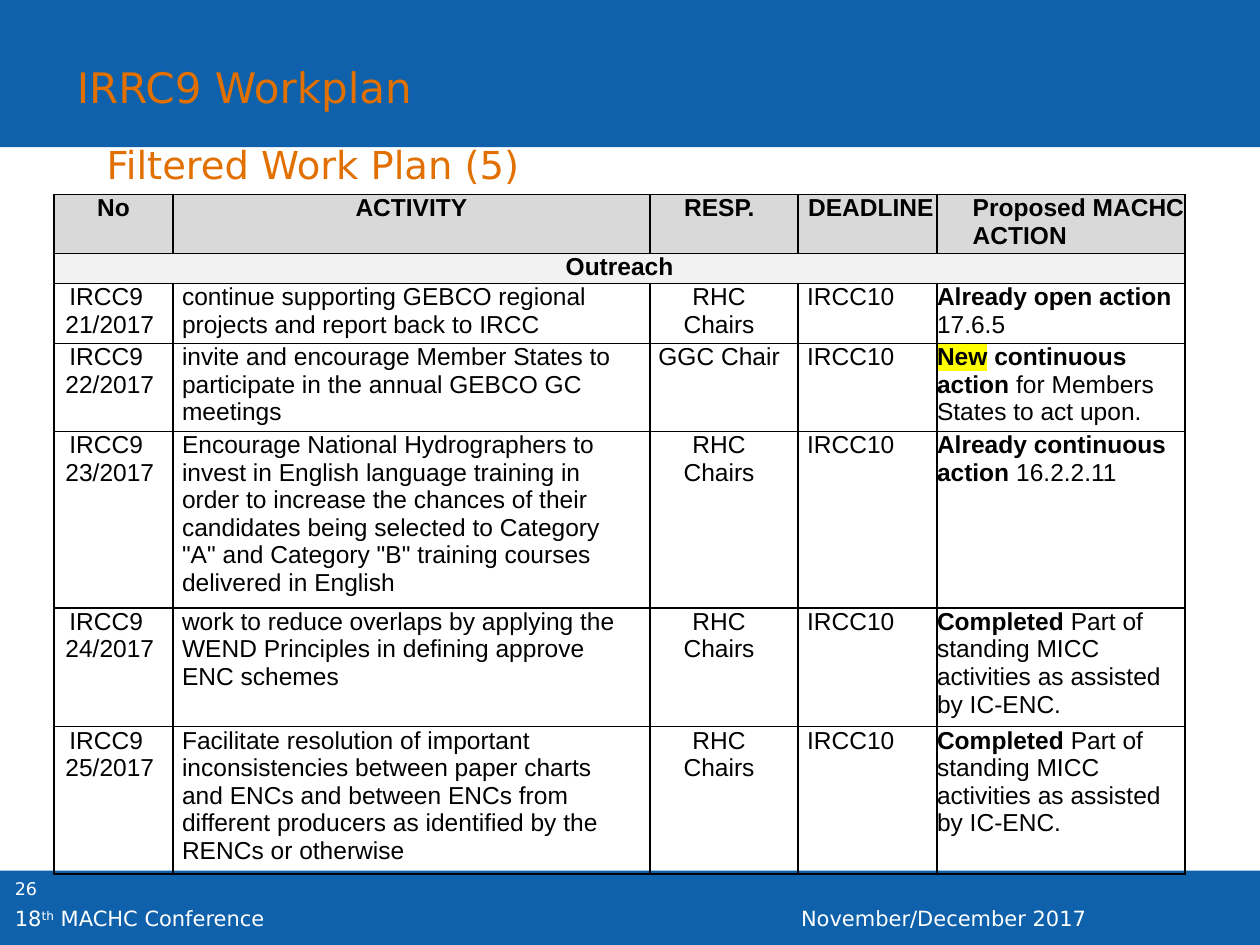
"""Build the IRRC9 work plan slide with its table of outreach activities."""
from dataclasses import dataclass

from lxml.etree import SubElement
from pptx import Presentation
from pptx.dml.color import RGBColor
from pptx.enum.shapes import MSO_SHAPE
from pptx.enum.text import MSO_AUTO_SIZE, PP_ALIGN
from pptx.oxml import parse_xml
from pptx.oxml.ns import nsdecls, qn
from pptx.util import Cm, Pt


@dataclass(frozen=True)
class Theme:
    blue: str = "0E61AA"
    orange: str = "E17000"
    white: str = "FFFFFF"
    black: str = "000000"
    header_fill: str = "D9D9D9"
    section_fill: str = "F2F2F2"
    highlight: str = "FFFF00"
    slide_font: str = "DejaVu Sans"
    table_font: str = "Arial"
    title_size: float = 24
    subtitle_size: float = 22
    footer_size: float = 12
    number_size: float = 10
    table_size: float = 14
    border_width: float = 1


@dataclass(frozen=True)
class Run:
    text: str
    bold: bool = False
    highlighted: bool = False
    superscript: bool = False


@dataclass(frozen=True)
class Band:
    top: float
    height: float


@dataclass(frozen=True)
class Label:
    runs: tuple[Run, ...]
    left: float
    top: float
    width: float
    height: float
    size: float
    color: str
    wrap: bool = True


@dataclass(frozen=True)
class CellStyle:
    left: float = 0
    right: float = 0
    first_line: float = 0
    centered: bool = False
    fill: str | None = None


@dataclass(frozen=True)
class Activity:
    number: str
    task: str
    responsible: str
    action: tuple[Run, ...]


THEME = Theme()
SLIDE_WIDTH, SLIDE_HEIGHT = 25.4, 19.05
BANDS = (Band(17.55, 1.5), Band(0, 2.97))
LABELS = (
    Label((Run("26"),), 0.05, 17.58, 1.98, 1.02, THEME.number_size, THEME.white),
    Label((Run("November/December 2017"),), 15.9, 18.14, 9.5, 0.61, THEME.footer_size, THEME.white),
    Label((Run("18"), Run("th", superscript=True), Run(" MACHC Conference")),
          0.05, 18.14, 11.13, 0.61, THEME.footer_size, THEME.white),
    Label((Run("Filtered Work Plan (5)"),), 1.9, 2.72, 9.17, 1.19,
          THEME.subtitle_size, THEME.orange, wrap=False),
    Label((Run("IRRC9 Workplan"),), 1.3, 1.12, 7.54, 1.27,
          THEME.title_size, THEME.orange, wrap=False),
)
TABLE_LEFT, TABLE_TOP = 1.09, 3.92
COLUMN_WIDTHS = (2.4, 9.61, 2.99, 2.8, 5.0)
ROW_HEIGHTS = (1.19, 0.6, 1.21, 1.77, 3.56, 2.39, 2.96)
HEADINGS = (
    ("No", CellStyle(0.18, 0.18, centered=True, fill=THEME.header_fill)),
    ("ACTIVITY", CellStyle(2.36, 2.36, centered=True, fill=THEME.header_fill)),
    ("RESP.", CellStyle(0.69, fill=THEME.header_fill)),
    ("DEADLINE", CellStyle(0.2, fill=THEME.header_fill)),
    ("Proposed MACHC ACTION", CellStyle(0.72, fill=THEME.header_fill)),
)
SECTION_STYLE = CellStyle(centered=True, fill=THEME.section_fill)
BODY_STYLES = (
    CellStyle(0.23, first_line=0.08),
    CellStyle(0.18, 0.5),
    CellStyle(0.13, 0.33, centered=True),
    CellStyle(0.18),
    CellStyle(),
)
DEADLINE = "IRCC10"
COMPLETED = (Run("Completed ", bold=True),
             Run("Part of standing MICC activities as assisted by IC-ENC."))
ACTIVITIES = (
    Activity("21/2017", "continue supporting GEBCO regional projects and report back to IRCC",
             "RHC Chairs", (Run("Already open action", bold=True), Run(" 17.6.5"))),
    Activity("22/2017", "invite and encourage Member States to participate in the annual "
             "GEBCO GC meetings", "GGC Chair",
             (Run("New", bold=True, highlighted=True), Run(" "),
              Run("continuous action", bold=True), Run(" for Members States to act upon."))),
    Activity("23/2017", "Encourage National Hydrographers to invest in English language training "
             "in order to increase the chances of their candidates being selected to Category "
             "\"A\" and Category \"B\" training courses delivered in English",
             "RHC Chairs", (Run("Already continuous action", bold=True), Run(" 16.2.2.11"))),
    Activity("24/2017", "work to reduce overlaps by applying the WEND Principles in defining "
             "approve ENC schemes", "RHC Chairs", COMPLETED),
    Activity("25/2017", "Facilitate resolution of important inconsistencies between paper charts "
             "and ENCs and between ENCs from different producers as identified by the RENCs "
             "or otherwise", "RHC Chairs", COMPLETED),
)


def write_runs(paragraph, runs: tuple[Run, ...], font_name: str, size: float, color: str) -> None:
    for item in runs:
        run = paragraph.add_run()
        run.text = item.text
        run.font.name = font_name
        run.font.size = Pt(size)
        run.font.bold = item.bold
        run.font.color.rgb = RGBColor.from_string(color)
        properties = run.font._element
        if item.superscript:
            properties.set("baseline", "30000")
        if item.highlighted:
            properties.find(qn("a:latin")).addprevious(parse_xml(
                f'<a:highlight {nsdecls("a")}><a:srgbClr val="{THEME.highlight}"/></a:highlight>'))


def add_band(slide, band: Band) -> None:
    shape = slide.shapes.add_shape(
        MSO_SHAPE.RECTANGLE, 0, Cm(band.top), Cm(SLIDE_WIDTH), Cm(band.height))
    shape.shadow.inherit = False
    shape.fill.solid()
    shape.fill.fore_color.rgb = RGBColor.from_string(THEME.blue)
    shape.line.fill.background()


def add_label(slide, label: Label) -> None:
    shape = slide.shapes.add_textbox(
        Cm(label.left), Cm(label.top), Cm(label.width), Cm(label.height))
    text_frame = shape.text_frame
    text_frame.word_wrap = label.wrap
    if not label.wrap:
        text_frame.auto_size = MSO_AUTO_SIZE.SHAPE_TO_FIT_TEXT
    write_runs(text_frame.paragraphs[0], label.runs, THEME.slide_font, label.size, label.color)


def add_borders(cell) -> None:
    properties = cell._tc.get_or_add_tcPr()
    for side in ("lnL", "lnR", "lnT", "lnB"):
        line = SubElement(properties, qn(f"a:{side}"), w=str(Pt(THEME.border_width)))
        fill = SubElement(line, qn("a:solidFill"))
        SubElement(fill, qn("a:srgbClr"), val=THEME.black)


def fill_cell(cell, runs: tuple[Run, ...], style: CellStyle) -> None:
    cell.margin_left = cell.margin_right = cell.margin_top = cell.margin_bottom = 0
    if style.fill:
        cell.fill.solid()
        cell.fill.fore_color.rgb = RGBColor.from_string(style.fill)
    paragraph = cell.text_frame.paragraphs[0]
    paragraph.alignment = PP_ALIGN.CENTER if style.centered else PP_ALIGN.LEFT
    properties = paragraph._p.get_or_add_pPr()
    for name, length in (("marL", style.left), ("marR", style.right), ("indent", style.first_line)):
        properties.set(name, str(Cm(length)))
    write_runs(paragraph, runs, THEME.table_font, THEME.table_size, THEME.black)


def add_work_plan(slide) -> None:
    table = slide.shapes.add_table(
        len(ROW_HEIGHTS), len(COLUMN_WIDTHS), Cm(TABLE_LEFT), Cm(TABLE_TOP),
        Cm(sum(COLUMN_WIDTHS)), Cm(sum(ROW_HEIGHTS))).table
    table.first_row = table.horz_banding = False
    for column, width in zip(table.columns, COLUMN_WIDTHS):
        column.width = Cm(width)
    for row, height in zip(table.rows, ROW_HEIGHTS):
        row.height = Cm(height)
    for cell in table.iter_cells():
        add_borders(cell)
        cell.fill.background()
    for index, (heading, style) in enumerate(HEADINGS):
        fill_cell(table.cell(0, index), (Run(heading, bold=True),), style)
    table.cell(1, 0).merge(table.cell(1, len(COLUMN_WIDTHS) - 1))
    fill_cell(table.cell(1, 0), (Run("Outreach", bold=True),), SECTION_STYLE)
    for row_index, activity in enumerate(ACTIVITIES, start=2):
        contents = ((Run(f"IRCC9 {activity.number}"),), (Run(activity.task),),
                    (Run(activity.responsible),), (Run(DEADLINE),), activity.action)
        for index, (runs, style) in enumerate(zip(contents, BODY_STYLES)):
            fill_cell(table.cell(row_index, index), runs, style)


def main() -> None:
    presentation = Presentation()
    presentation.slide_width, presentation.slide_height = Cm(SLIDE_WIDTH), Cm(SLIDE_HEIGHT)
    slide = presentation.slides.add_slide(presentation.slide_layouts[6])
    for band in BANDS:
        add_band(slide, band)
    for label in LABELS:
        add_label(slide, label)
    add_work_plan(slide)
    presentation.save("out.pptx")


if __name__ == "__main__":
    main()
